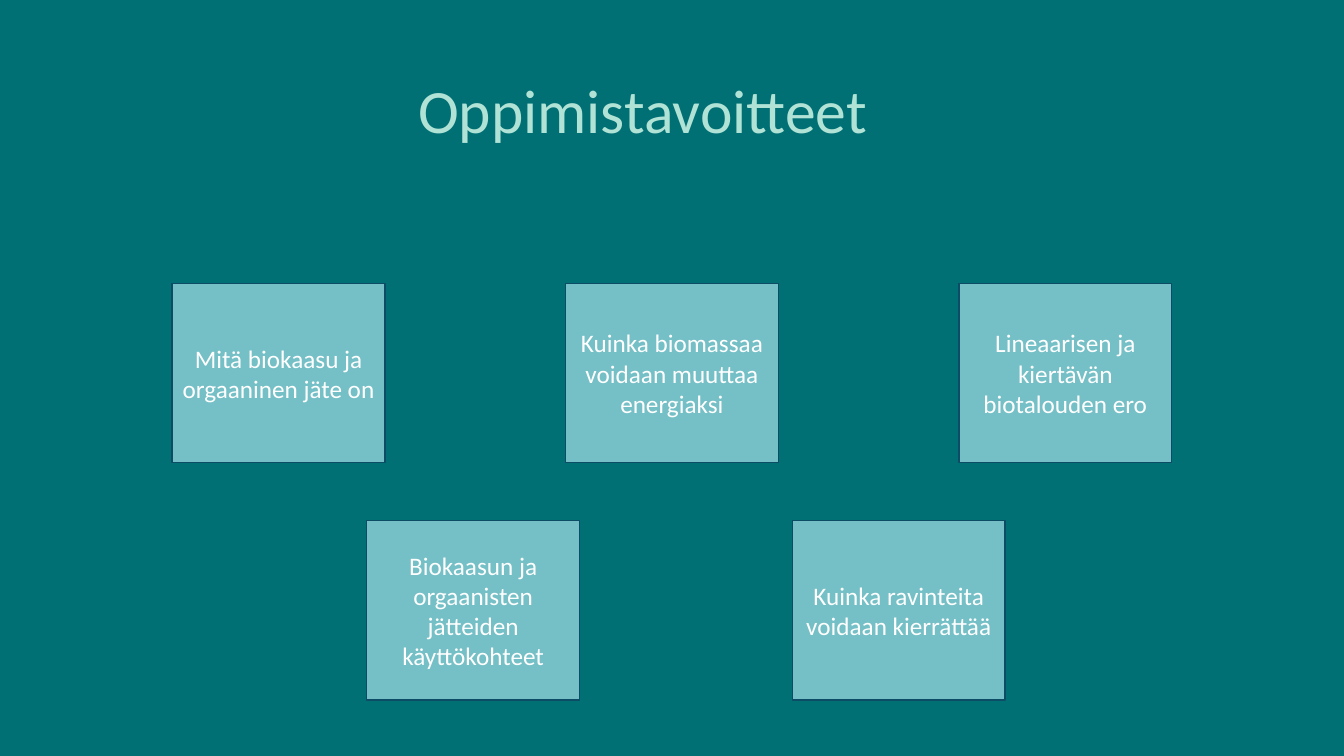
from pptx import Presentation
from pptx.dml.color import RGBColor
from pptx.enum.shapes import MSO_SHAPE as Shape
from pptx.enum.text import MSO_ANCHOR as Anchor, PP_ALIGN as Align
from pptx.util import Pt

COLORS = {
    "background": "007075",
    "title": "B1E2D6",
    "card": "74C0C6",
    "border": "0C4C64",
    "text": "FFFFFF",
}
CARD_WIDTH, CARD_HEIGHT = 152, 128
UPPER_GOALS = [
    "Mitä biokaasu ja orgaaninen jäte on",
    "Kuinka biomassaa voidaan muuttaa energiaksi",
    "Lineaarisen ja kiertävän biotalouden ero",
]
LOWER_GOALS = [
    "Biokaasun ja orgaanisten jätteiden käyttökohteet",
    "Kuinka ravinteita voidaan kierrättää",
]


def color(name):
    """Return the named palette colour."""
    return RGBColor.from_string(COLORS[name])


def write(frame, text, size, color_name, align, anchor):
    """Fill a text frame with one formatted paragraph."""
    frame.text = text
    frame.word_wrap = True
    frame.vertical_anchor = anchor
    paragraph = frame.paragraphs[0]
    paragraph.alignment = align
    paragraph.line_spacing = 1.0
    font = paragraph.runs[0].font
    font.name, font.size = "Calibri", Pt(size)
    font.color.rgb = color(color_name)


def add_heading(slide, left, top, width, height):
    """Place the slide title in the given box."""
    heading = slide.shapes.title
    heading.left, heading.top = Pt(left), Pt(top)
    heading.width, heading.height = Pt(width), Pt(height)
    write(heading.text_frame, "Oppimistavoitteet", 44, "title", Align.LEFT, Anchor.TOP)


def add_goal_row(slide, goals, left, top, width, height):
    """Spread goal cards evenly from the left to the right edge of the box."""
    pitch = (width - CARD_WIDTH) / (len(goals) - 1)
    for index, goal in enumerate(goals):
        card = slide.shapes.add_shape(
            Shape.RECTANGLE, Pt(left + index * pitch), Pt(top), Pt(CARD_WIDTH), Pt(height)
        )
        card.shadow.inherit = False
        card.fill.solid()
        card.fill.fore_color.rgb = color("card")
        card.line.color.rgb = color("border")
        card.line.width = Pt(1)
        write(card.text_frame, goal, 18, "text", Align.CENTER, Anchor.MIDDLE)


def main():
    """Build the learning goals slide and save it."""
    deck = Presentation()
    deck.slide_width, deck.slide_height = Pt(960), Pt(540)
    slide = deck.slides.add_slide(deck.slide_layouts[5])
    slide.background.fill.solid()
    slide.background.fill.fore_color.rgb = color("background")
    add_heading(slide, 291.5, 47.5, 377, 60.5)
    add_goal_row(slide, UPPER_GOALS, 123, 202.5, 714, CARD_HEIGHT)
    add_goal_row(slide, LOWER_GOALS, 262, 372, 456, CARD_HEIGHT)
    deck.save("out.pptx")


if __name__ == "__main__":
    main()
